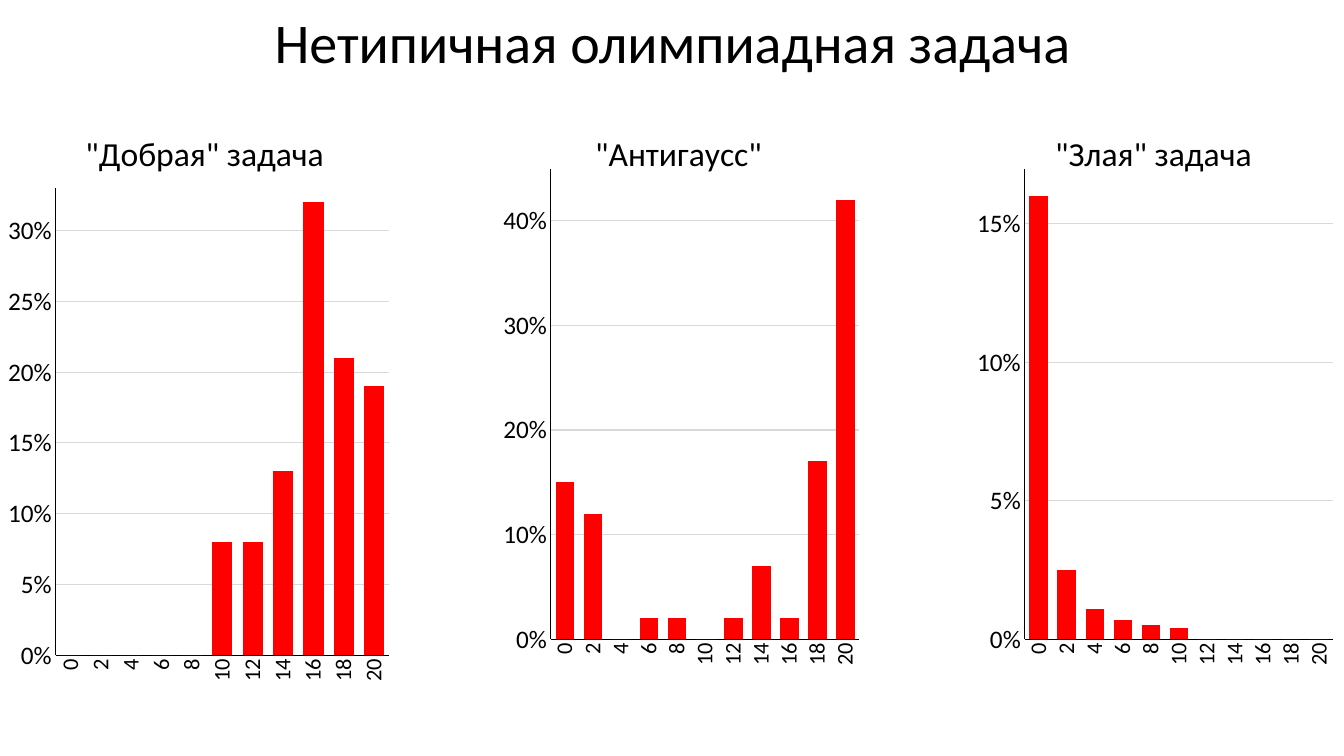
from dataclasses import dataclass

from lxml import etree
from pptx import Presentation
from pptx.chart.data import CategoryChartData
from pptx.dml.color import RGBColor
from pptx.enum.chart import XL_CHART_TYPE, XL_TICK_MARK
from pptx.enum.text import MSO_ANCHOR, PP_ALIGN
from pptx.oxml.ns import qn
from pptx.util import Inches, Pt

COLUMNS = XL_CHART_TYPE.COLUMN_CLUSTERED
NO_TICK = XL_TICK_MARK.NONE
MIDDLE = MSO_ANCHOR.MIDDLE
CENTER = PP_ALIGN.CENTER


@dataclass(frozen=True)
class Theme:
    font: str = "Calibri"
    text: RGBColor = RGBColor(0, 0, 0)
    bar: RGBColor = RGBColor(255, 0, 0)
    grid: RGBColor = RGBColor(0xD9, 0xD9, 0xD9)
    heading_size: int = 40
    chart_title_size: int = 24
    value_size: int = 18
    score_size: int = 16
    line_width: float = 0.75


@dataclass(frozen=True)
class Histogram:
    title: str
    title_left: float
    plot: dict[str, float]
    top_share: float
    step: float
    shares: tuple[float, ...]


THEME = Theme()
SCORES = [str(score) for score in range(0, 21, 2)]
CHART_PITCH, CHART_TOP = 4.7, 0.97
CHART_WIDTH, CHART_HEIGHT = 3.94, 5.91
TITLE_TOP = 0.045
WIDE_PLOT = {"x": 0.14, "y": 0.152, "w": 0.84, "h": 0.784}
NARROW_PLOT = {"x": 0.194, "y": 0.119, "w": 0.777, "h": 0.79}

HISTOGRAMS = [
    Histogram('"Добрая" задача', 0.2, WIDE_PLOT, 0.33, 0.05,
              (0, 0, 0, 0, 0, 0.08, 0.08, 0.13, 0.32, 0.21, 0.19)),
    Histogram('"Антигаусс"', 0.29, NARROW_PLOT, 0.45, 0.1,
              (0.15, 0.12, 0, 0.02, 0.02, 0, 0.02, 0.07, 0.02, 0.17, 0.42)),
    Histogram('"Злая" задача', 0.255, NARROW_PLOT, 0.17, 0.05,
              (0.16, 0.025, 0.011, 0.007, 0.005, 0.004, 0, 0, 0, 0, 0)),
]


def style_font(font, size: int) -> None:
    font.name = THEME.font
    font.size = Pt(size)
    font.bold = False
    font.color.rgb = THEME.text


def style_line(line, color: RGBColor) -> None:
    line.color.rgb = color
    line.width = Pt(THEME.line_width)


def set_layout(parent, index: int, place: dict[str, float], inner: bool = False) -> None:
    for old in parent.findall(qn("c:layout")):
        parent.remove(old)
    layout = etree.Element(qn("c:layout"))
    manual = etree.SubElement(layout, qn("c:manualLayout"))
    if inner:
        etree.SubElement(manual, qn("c:layoutTarget"), val="inner")
    for mode in ("xMode", "yMode"):
        etree.SubElement(manual, qn(f"c:{mode}"), val="edge")
    for name, value in place.items():
        etree.SubElement(manual, qn(f"c:{name}"), val=str(value))
    parent.insert(index, layout)


def style_axis(axis, size: int) -> None:
    axis.major_tick_mark = NO_TICK
    axis.minor_tick_mark = NO_TICK
    style_font(axis.tick_labels.font, size)
    style_line(axis.format.line, THEME.text)


def add_histogram(page, histogram: Histogram, left: float) -> None:
    data = CategoryChartData(number_format="0%")
    data.categories = SCORES
    data.add_series("Series 1", histogram.shares)
    chart = page.shapes.add_chart(
        COLUMNS, Inches(left), Inches(CHART_TOP),
        Inches(CHART_WIDTH), Inches(CHART_HEIGHT), data).chart
    style_font(chart.font, THEME.value_size)
    chart.has_legend = False

    title = chart.chart_title
    title.text_frame.text = histogram.title
    style_font(title.text_frame.paragraphs[0].font, THEME.chart_title_size)
    set_layout(title._element, 1, {"x": histogram.title_left, "y": TITLE_TOP})
    plot_area = chart._chartSpace.chart.plotArea
    set_layout(plot_area, 0, histogram.plot, inner=True)

    score_axis = chart.category_axis
    style_axis(score_axis, THEME.score_size)
    label_body = score_axis._element.find(qn("c:txPr")).find(qn("a:bodyPr"))
    label_body.set("rot", "-5400000")
    label_body.set("vert", "horz")

    share_axis = chart.value_axis
    style_axis(share_axis, THEME.value_size)
    share_axis.minimum_scale = 0
    share_axis.maximum_scale = histogram.top_share
    share_axis.major_unit = histogram.step
    share_axis.tick_labels.number_format = "0%"
    share_axis.tick_labels.number_format_is_linked = False
    share_axis.has_major_gridlines = True
    style_line(share_axis.major_gridlines.format.line, THEME.grid)

    plot = chart.plots[0]
    plot.gap_width = 50
    plot.vary_by_categories = False
    bars = plot.series[0].format.fill
    bars.solid()
    bars.fore_color.rgb = THEME.bar


def add_heading(page, text: str) -> None:
    box = page.shapes.title
    box.left, box.top = Inches(1.67), Inches(0)
    box.width, box.height = Inches(10), Inches(0.91)
    box.text_frame.text = text
    box.text_frame.vertical_anchor = MIDDLE
    para = box.text_frame.paragraphs[0]
    para.alignment = CENTER
    para.line_spacing = 0.9
    style_font(para.font, THEME.heading_size)


def main() -> None:
    deck = Presentation()
    deck.slide_width, deck.slide_height = Inches(13.33), Inches(7.5)
    page = deck.slides.add_slide(deck.slide_layouts[5])
    add_heading(page, "Нетипичная олимпиадная задача")
    for index, histogram in enumerate(HISTOGRAMS):
        add_histogram(page, histogram, index * CHART_PITCH)
    deck.save("out.pptx")


if __name__ == "__main__":
    main()
